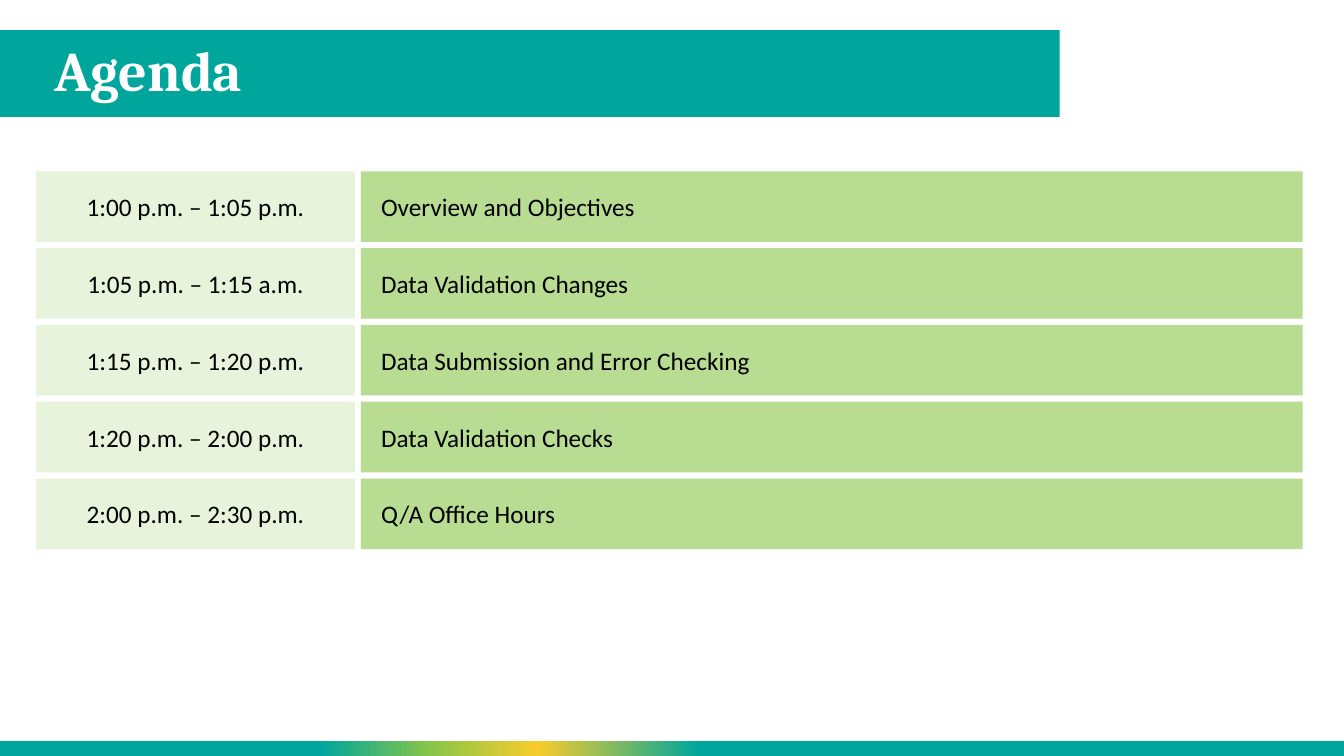
import pptx
import pptx.dml.color
import pptx.enum.shapes
import pptx.enum.text
import pptx.oxml.ns
import pptx.util
from lxml import etree

Inches = pptx.util.Inches
RGBColor = pptx.dml.color.RGBColor
Align = pptx.enum.text.PP_ALIGN

TEAL = RGBColor(0x00, 0xA6, 0x9B)
GREEN = RGBColor(0x87, 0xC5, 0x4A)
YELLOW = RGBColor(0xF8, 0xCC, 0x2B)
PALE_GREEN = RGBColor(0xE7, 0xF3, 0xDB)
LIGHT_GREEN = RGBColor(0xB7, 0xDC, 0x92)
WHITE = RGBColor(0xFF, 0xFF, 0xFF)
BLACK = RGBColor(0x00, 0x00, 0x00)

FOOTER_STOPS = [(0, TEAL), (24, TEAL), (32, GREEN), (40, YELLOW), (52, TEAL), (100, TEAL)]

AGENDA = [
    ("1:00 p.m. – 1:05 p.m.", "Overview and Objectives"),
    ("1:05 p.m. – 1:15 a.m.", "Data Validation Changes"),
    ("1:15 p.m. – 1:20 p.m.", "Data Submission and Error Checking"),
    ("1:20 p.m. – 2:00 p.m.", "Data Validation Checks"),
    ("2:00 p.m. – 2:30 p.m.", "Q/A Office Hours"),
]
FIRST_ROW_TOP = 1.7
ROW_PITCH = 0.762
ROW_HEIGHT = 0.7


def add_bar(slide, left, top, width, height, color):
    bar = slide.shapes.add_shape(
        pptx.enum.shapes.MSO_SHAPE.RECTANGLE,
        Inches(left), Inches(top), Inches(width), Inches(height))
    bar.shadow.inherit = False
    bar.fill.solid()
    bar.fill.fore_color.rgb = color
    bar.line.fill.background()
    return bar


def set_gradient(bar, stops):
    """Fill a bar from left to right with (percent, colour) stops."""
    qn = pptx.oxml.ns.qn
    bar.fill.gradient()
    bar.fill.gradient_angle = 0
    stop_list = next(bar._element.spPr.iter(qn("a:gsLst")))
    for default_stop in list(stop_list):
        stop_list.remove(default_stop)
    for percent, color in stops:
        stop = etree.SubElement(stop_list, qn("a:gs"), pos=str(percent * 1000))
        etree.SubElement(stop, qn("a:srgbClr"), val=str(color))


def write_text(shape, text, size=18, font="Calibri", color=BLACK, bold=False,
               align=Align.LEFT, side_inset=0.1, line_spacing=None):
    frame = shape.text_frame
    frame.word_wrap = True
    frame.vertical_anchor = pptx.enum.text.MSO_ANCHOR.MIDDLE
    frame.margin_left = frame.margin_right = Inches(side_inset)
    frame.margin_top = frame.margin_bottom = Inches(0.05)
    paragraph = frame.paragraphs[0]
    paragraph.alignment = align
    paragraph.line_spacing = line_spacing
    run = paragraph.add_run()
    run.text = text
    run.font.size = pptx.util.Pt(size)
    run.font.name = font
    run.font.bold = bold
    run.font.color.rgb = color


def add_title(slide, text):
    add_bar(slide, -0.01, 0.3, 10.52, 0.86, TEAL)
    title = slide.shapes.add_textbox(Inches(0.44), Inches(0.3), Inches(10.06), Inches(0.86))
    write_text(title, text, size=40, font="Cambria", color=WHITE, bold=True, line_spacing=0.9)


def add_agenda_row(slide, top, time, topic):
    time_cell = add_bar(slide, 0.36, top, 3.16, ROW_HEIGHT, PALE_GREEN)
    write_text(time_cell, time, align=Align.CENTER)
    topic_cell = add_bar(slide, 3.58, top, 9.34, ROW_HEIGHT, LIGHT_GREEN)
    write_text(topic_cell, topic, side_inset=0.2)


def main():
    deck = pptx.Presentation()
    deck.slide_width = Inches(13.33)
    deck.slide_height = Inches(7.5)
    slide = deck.slides.add_slide(deck.slide_layouts[6])

    footer = add_bar(slide, -0.01, 7.35, 13.34, 0.15, TEAL)
    set_gradient(footer, FOOTER_STOPS)
    add_title(slide, "Agenda")
    for index, (time, topic) in enumerate(AGENDA):
        add_agenda_row(slide, FIRST_ROW_TOP + index * ROW_PITCH, time, topic)

    deck.save("out.pptx")


if __name__ == "__main__":
    main()
